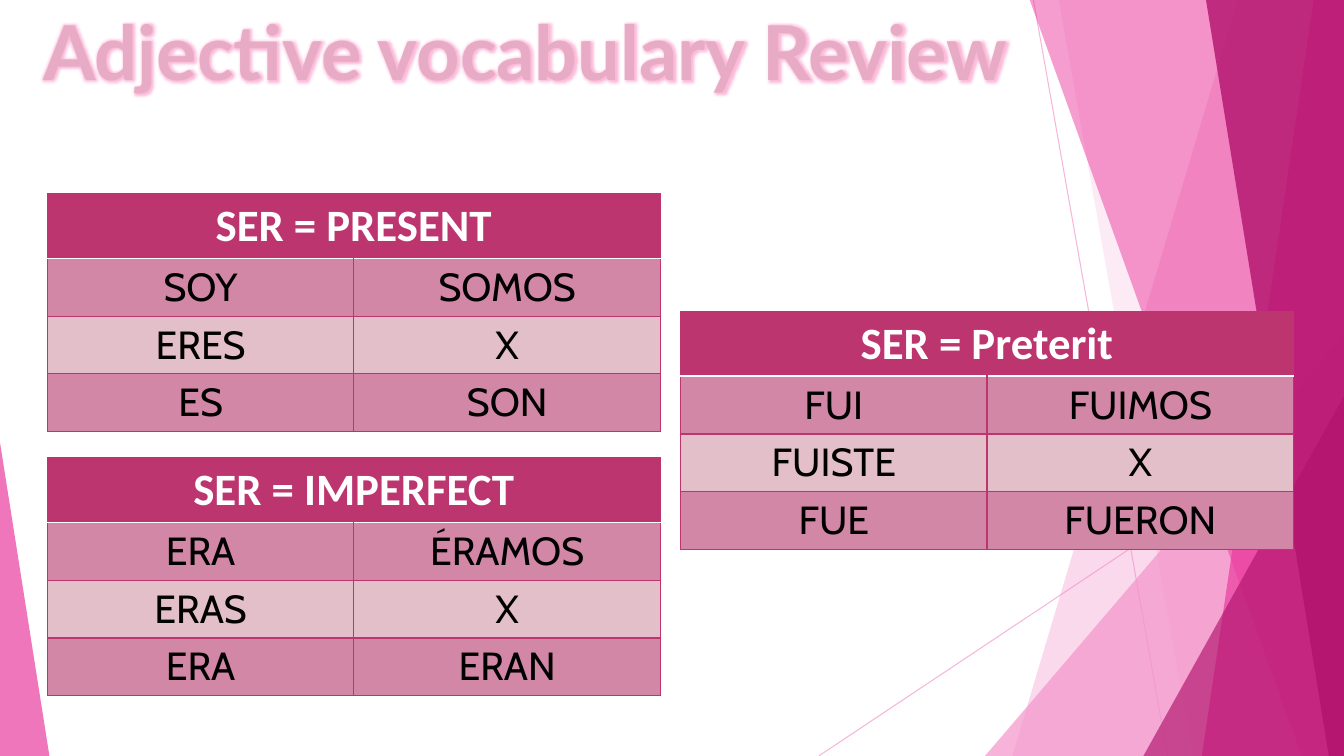
"""Build a slide that reviews three tenses of the Spanish verb ser."""
from lxml import etree
from pptx import Presentation
from pptx.dml.color import RGBColor
from pptx.enum.shapes import MSO_CONNECTOR, MSO_SHAPE
from pptx.enum.text import MSO_ANCHOR, MSO_AUTO_SIZE, PP_ALIGN
from pptx.oxml import parse_xml
from pptx.oxml.ns import nsdecls, qn
from pptx.util import Inches, Pt

STRAIGHT = MSO_CONNECTOR.STRAIGHT
TRIANGLE = MSO_SHAPE.ISOSCELES_TRIANGLE
CENTER = PP_ALIGN.CENTER
TOP, MIDDLE = MSO_ANCHOR.TOP, MSO_ANCHOR.MIDDLE
NO_FIT = MSO_AUTO_SIZE.NONE

COLORS = {
    "blush": "F496CB", "pink": "EB3D9F", "plum": "B2136D",
    "title": "E7ABC5", "glow": "FA8CC0", "rose": "BC356F",
    "dark band": "D387A6", "light band": "E3BFCA",
    "white": "FFFFFF", "black": "000000",
}
WIDTH, HEIGHT = 13.33, 7.5
COLUMN, HEADER_ROW, FORM_ROW = 3.04, 0.63, 0.57


def write(frame, text, font, size, color, bold=False):
    paragraph = frame.paragraphs[0]
    paragraph.alignment = CENTER
    run = paragraph.add_run()
    run.text = text
    run.font.name = font
    run.font.size = Pt(size)
    run.font.bold = bold
    run.font.color.rgb = RGBColor.from_string(COLORS[color])
    return run


def glaze(part, color, opacity):
    part.solid()
    part.fore_color.rgb = RGBColor.from_string(COLORS[color])
    return {"val": str(opacity * 1000)}


prs = Presentation()
prs.slide_width, prs.slide_height = Inches(WIDTH), Inches(HEIGHT)
slide = prs.slides.add_slide(prs.slide_layouts[5])
shapes = slide.shapes

for start_x, start_y, end_x in [(10.25, 0, 11.58), (WIDTH, 4.03, 8.12)]:
    ray = shapes.add_connector(STRAIGHT, Inches(start_x), Inches(start_y), Inches(end_x), Inches(HEIGHT))
    ray.line.width = Pt(0.75)
    alpha = glaze(ray.line.fill, "blush", 70)
    etree.SubElement(next(ray.element.iter(qn("a:srgbClr"))), qn("a:alpha"), alpha)
    etree.SubElement(ray.element.spPr, qn("a:effectLst"))

facets = [
    ("band", (12.28, 10.04), "blush", 36),
    ("band", (10.5, 11.83), "blush", 20),
    ("corner", (9.77, 3.33, 3.56, 1), "blush", 72),
    ("band", (10.21, 12.91), "pink", 50),
    ("band", (13.03, 11.92), "pink", 70),
    ("band", (11.96, 13.18), "plum", 80),
    ("corner", (11.34, 3.93, 1.99, 1), "plum", 66),
    ("corner", (0, 4.39, 0.49, 0), "pink", 70),
]
for kind, place, color, opacity in facets:
    if kind == "band":
        top_x, bottom_x = place
        outline = shapes.build_freeform(Inches(top_x), Inches(-0.01))
        corners = [(WIDTH, -0.01), (WIDTH, HEIGHT), (bottom_x, HEIGHT)]
        outline.add_line_segments([(Inches(x), Inches(y)) for x, y in corners])
        facet = outline.convert_to_shape()
    else:
        left, top, width, apex = place
        facet = shapes.add_shape(TRIANGLE, Inches(left), Inches(top), Inches(width), Inches(HEIGHT - top))
        facet.adjustments[0] = apex
    alpha = glaze(facet.fill, color, opacity)
    etree.SubElement(next(facet.element.iter(qn("a:srgbClr"))), qn("a:alpha"), alpha)
    facet.line.fill.background()
    facet.shadow.inherit = False

title = shapes.title
title.left, title.top, title.width, title.height = 0, 0, Inches(10.42), Inches(1.92)
title.text_frame.auto_size = NO_FIT
title.text_frame.word_wrap = True
title.text_frame.vertical_anchor = TOP
heading = write(title.text_frame, "Adjective vocabulary Review", font="Lato", size=54, color="title", bold=True)
heading_format = heading.font.fill
properties = next(heading.font.fill and title.element.iter(qn("a:rPr")))
properties.insert(0, parse_xml(
    f'<a:ln {nsdecls("a")} w="{Pt(1.75)}"><a:solidFill>'
    f'<a:srgbClr val="{COLORS["rose"]}"/></a:solidFill></a:ln>'))
properties.insert(2, parse_xml(
    f'<a:effectLst {nsdecls("a")}><a:glow rad="{Pt(5)}">'
    f'<a:srgbClr val="{COLORS["glow"]}"><a:alpha val="60000"/></a:srgbClr></a:glow></a:effectLst>'))

tenses = [
    (0.47, 1.92, "SER = PRESENT", [("SOY", "SOMOS"), ("ERES", "X"), ("ES", "SON")]),
    (0.47, 4.54, "SER = IMPERFECT", [("ERA", "ÉRAMOS"), ("ERAS", "X"), ("ERA", "ERAN")]),
    (6.75, 3.09, "SER = Preterit", [("FUI", "FUIMOS"), ("FUISTE", "X"), ("FUE", "FUERON")]),
]
for left, top, tense, forms in tenses:
    table = shapes.add_table(
        len(forms) + 1, 2, Inches(left), Inches(top),
        Inches(2 * COLUMN), Inches(HEADER_ROW + len(forms) * FORM_ROW)).table
    table.horz_banding = False
    for row_number, row in enumerate(table.rows):
        row.height = Inches(FORM_ROW if row_number else HEADER_ROW)
        band = ("dark band" if row_number % 2 else "light band") if row_number else "rose"
        for column_number, cell in enumerate(row.cells):
            cell.fill.solid()
            cell.fill.fore_color.rgb = RGBColor.from_string(COLORS[band])
            cell.vertical_anchor = MIDDLE if row_number else TOP
            if row_number:
                write(cell.text_frame, forms[row_number - 1][column_number], font="Cabin", size=28, color="black")
            for position, side in enumerate(("lnL", "lnR", "lnT", "lnB")):
                under_header = (row_number, side) in [(0, "lnB"), (1, "lnT")]
                color, weight = ("white", 1.5) if under_header else ("rose", 1)
                cell._tc.get_or_add_tcPr().insert(position, parse_xml(
                    f'<a:{side} {nsdecls("a")} w="{Pt(weight)}"><a:solidFill>'
                    f'<a:srgbClr val="{COLORS[color]}"/></a:solidFill></a:{side}>'))
    header = table.cell(0, 0)
    header.merge(table.cell(0, 1))
    write(header.text_frame, tense, font="Calibri", size=32, color="white", bold=True)

prs.save("out.pptx")
